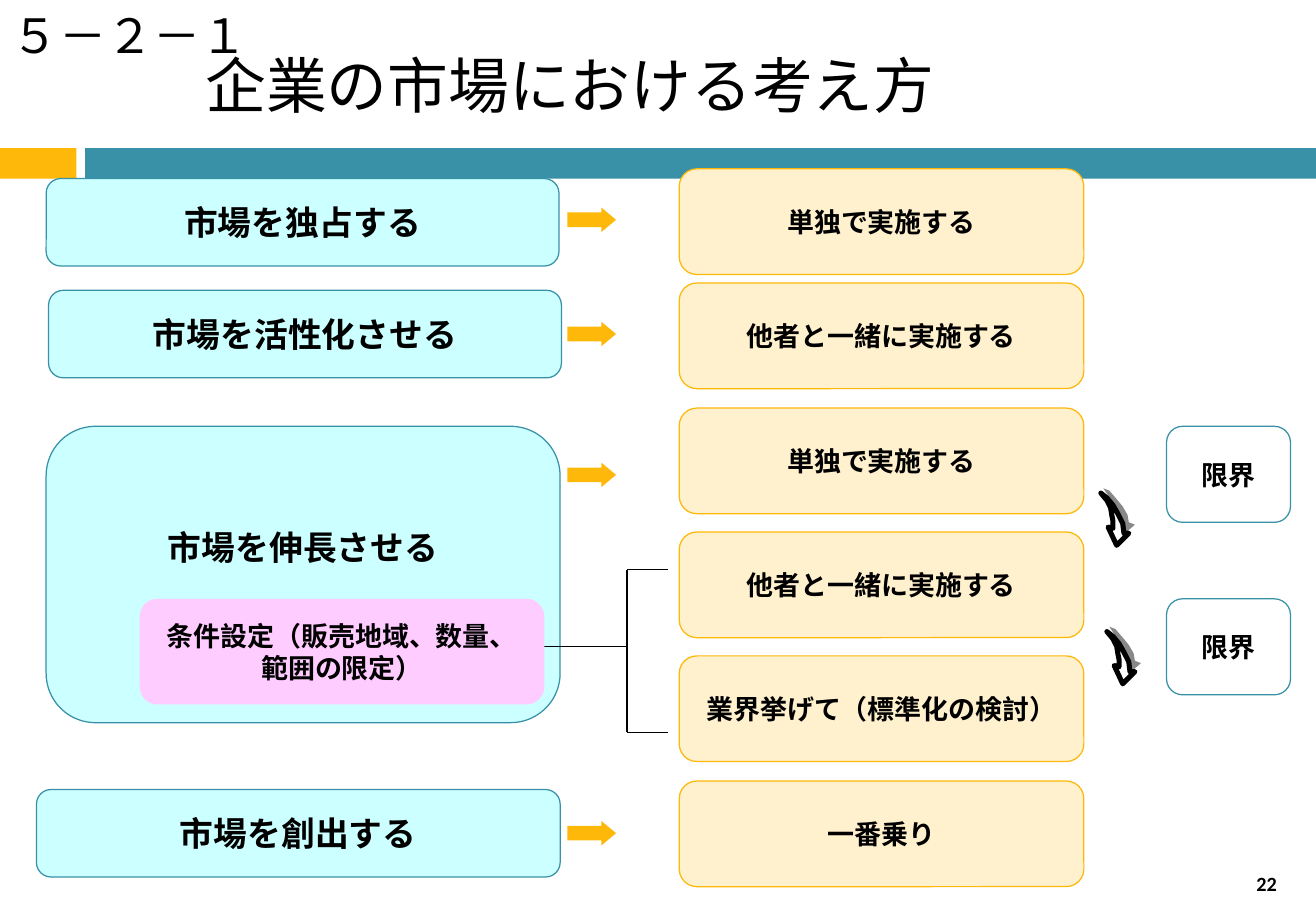
from pptx import Presentation
from pptx.dml.color import RGBColor
from pptx.enum.shapes import MSO_CONNECTOR, MSO_SHAPE
from pptx.enum.text import MSO_ANCHOR, PP_ALIGN
from pptx.oxml.ns import qn
from pptx.util import Inches, Pt
from lxml.etree import SubElement

BLACK = RGBColor(0x00, 0x00, 0x00)
WHITE = RGBColor(0xFF, 0xFF, 0xFF)
GRAY = RGBColor(0x88, 0x88, 0x88)
TEAL = RGBColor(0x38, 0x91, 0xA7)
AMBER = RGBColor(0xFE, 0xB8, 0x0A)
CYAN = RGBColor(0xCC, 0xFF, 0xFF)
CREAM = RGBColor(0xFF, 0xF1, 0xCE)
PINK = RGBColor(0xFF, 0xCC, 0xFF)
JAPANESE = "Noto Sans CJK JP"
LATIN = "Calibri"

TITLE = "企業の市場における考え方"
SECTION = "５－２－１"
PAGE = "22"
BANDS = [((0, 1.22, 0.63, 0.25), AMBER), ((0.7, 1.22, 10.13, 0.25), TEAL)]
GOALS = [
    ("市場を独占する", (0.38, 1.47, 4.22, 0.72), 0.04),
    ("市場を活性化させる", (0.4, 2.39, 4.22, 0.72), 0.04),
    ("市場を伸長させる", (0.38, 3.51, 4.23, 2.44), 0.5),
    ("市場を創出する", (0.3, 6.5, 4.31, 0.72), 0.04),
]
CONDITION = ["条件設定（販売地域、数量、", "範囲の限定）"]
METHODS = [
    ("単独で実施する", 1.39),
    ("他者と一緒に実施する", 2.33),
    ("単独で実施する", 3.36),
    ("他者と一緒に実施する", 4.38),
    ("業界挙げて（標準化の検討）", 5.4),
    ("一番乗り", 6.43),
]
LIMIT = "限界"
LIMIT_TOPS = [3.51, 4.93]
ARROW_CENTERS = [1.81, 2.75, 3.91, 6.86]
BRACKET = [
    ((5.5, 6.03), (5.16, 6.03)),
    ((5.5, 4.69), (5.16, 4.69)),
    ((5.16, 4.69), (5.16, 6.03)),
    ((5.16, 5.32), (4.39, 5.32)),
]
CURVE_OFFSETS = [(0, 0), (0.05, 1.14)]
CURVE_SHADOW = [
    (9.29, 4.3), (9.28, 4.24), (9.24, 4.17), (9.19, 4.11), (9.13, 4.04),
    (9.08, 4.02), (9.12, 4.08), (9.15, 4.13), (9.17, 4.2), (9.18, 4.27),
    (9.14, 4.28), (9.21, 4.42), (9.26, 4.39), (9.34, 4.32),
]
CURVE_ARROW = [
    (9.25, 4.39), (9.24, 4.31), (9.2, 4.23), (9.16, 4.16), (9.11, 4.1),
    (9.06, 4.06), (9.11, 4.12), (9.14, 4.18), (9.15, 4.24), (9.16, 4.29),
    (9.16, 4.35), (9.12, 4.34), (9.19, 4.49), (9.29, 4.39),
]


def apply(target, values):
    """Set each named attribute on the target."""
    for name, value in values.items():
        setattr(target, name, value)


def paint(shape, fill, line=None, width=0.75):
    """Give a shape its fill and outline, without shadow."""
    shape.shadow.inherit = False
    if fill is None:
        shape.fill.background()
    else:
        shape.fill.solid()
        shape.fill.fore_color.rgb = fill
    if line is None:
        shape.line.fill.background()
    else:
        shape.line.color.rgb = line
        shape.line.width = Pt(width)


def write(shape, lines, size, bold=False, align=PP_ALIGN.CENTER, font=JAPANESE,
          spacing=None, **frame_format):
    """Write paragraphs with one format into a shape."""
    frame = shape.text_frame
    apply(frame, {"word_wrap": True, "vertical_anchor": MSO_ANCHOR.MIDDLE, **frame_format})
    frame.text = "\n".join(lines)
    for paragraph in frame.paragraphs:
        apply(paragraph, {"alignment": align, "line_spacing": spacing})
        for run in paragraph.runs:
            apply(run.font, {"size": Pt(size), "bold": bold, "name": font})
            run.font.color.rgb = BLACK
            SubElement(run.font._element, qn("a:ea"), typeface=JAPANESE)


def add_preset(slide, kind, box, fill, line=None):
    """Add a painted preset shape."""
    shape = slide.shapes.add_shape(kind, *map(Inches, box))
    paint(shape, fill, line)
    return shape


def add_box(slide, lines, box, size, fill, line=None, bottom=0.04):
    """Add a rounded box with bold centred text."""
    shape = add_preset(slide, MSO_SHAPE.ROUNDED_RECTANGLE, box, fill, line)
    write(shape, lines, size, bold=True, word_wrap=False,
          margin_left=Inches(0.07), margin_right=Inches(0.07),
          margin_top=Inches(0.04), margin_bottom=Inches(bottom))


def add_curve(slide, points, offset, fill, line=None):
    """Add one curved arrow outline moved by an offset."""
    moved = [(Inches(x + offset[0]), Inches(y + offset[1])) for x, y in points]
    builder = slide.shapes.build_freeform(*moved[0])
    builder.add_line_segments(moved[1:], close=True)
    paint(builder.convert_to_shape(), fill, line, 3)


def add_label(slide, text, box, size, **text_format):
    """Add a plain text box."""
    label = slide.shapes.add_textbox(*map(Inches, box))
    write(label, [text], size, font=LATIN, **text_format)


def main():
    """Build and save the slide on market strategies."""
    presentation = Presentation()
    apply(presentation, {"slide_width": Inches(10.83), "slide_height": Inches(7.5)})
    slide = presentation.slides.add_slide(presentation.slide_layouts[5])

    title = slide.shapes.title
    apply(title, {"left": Inches(1.59), "top": Inches(0.15),
                  "width": Inches(7.85), "height": Inches(1.08)})
    write(title, [TITLE], 36, align=PP_ALIGN.LEFT)

    for box, color in BANDS:
        add_preset(slide, MSO_SHAPE.RECTANGLE, box, color)
    for center in ARROW_CENTERS:
        arrow = add_preset(slide, MSO_SHAPE.RIGHT_ARROW, (4.67, center - 0.1, 0.4, 0.2), AMBER)
        arrow.adjustments[0] = arrow.adjustments[1] = 0.6

    for text, box, bottom in GOALS:
        add_box(slide, [text], box, 20, CYAN, TEAL, bottom)
    for text, top in METHODS:
        add_box(slide, [text], (5.59, top, 3.33, 0.87), 16, CREAM, AMBER)
    for start, end in BRACKET:
        connector = slide.shapes.add_connector(
            MSO_CONNECTOR.STRAIGHT, *map(Inches, start + end))
        connector.line.color.rgb = BLACK
        connector.line.width = Pt(0.75)
        SubElement(connector._element.spPr, qn("a:effectLst"))
    add_box(slide, CONDITION, (1.15, 4.93, 3.33, 0.87), 16, PINK)

    for offset in CURVE_OFFSETS:
        add_curve(slide, CURVE_SHADOW, offset, GRAY)
        add_curve(slide, CURVE_ARROW, offset, WHITE, BLACK)
    for top in LIMIT_TOPS:
        add_box(slide, [LIMIT], (9.6, top, 1.02, 0.79), 16, None, TEAL)

    add_label(slide, SECTION, (0, 0, 2.43, 0.57), 28, align=PP_ALIGN.LEFT,
              vertical_anchor=MSO_ANCHOR.TOP)
    add_label(slide, PAGE, (10.11, 7.16, 0.63, 0.27), 12, bold=True, spacing=0.8)
    presentation.save("out.pptx")


if __name__ == "__main__":
    main()
